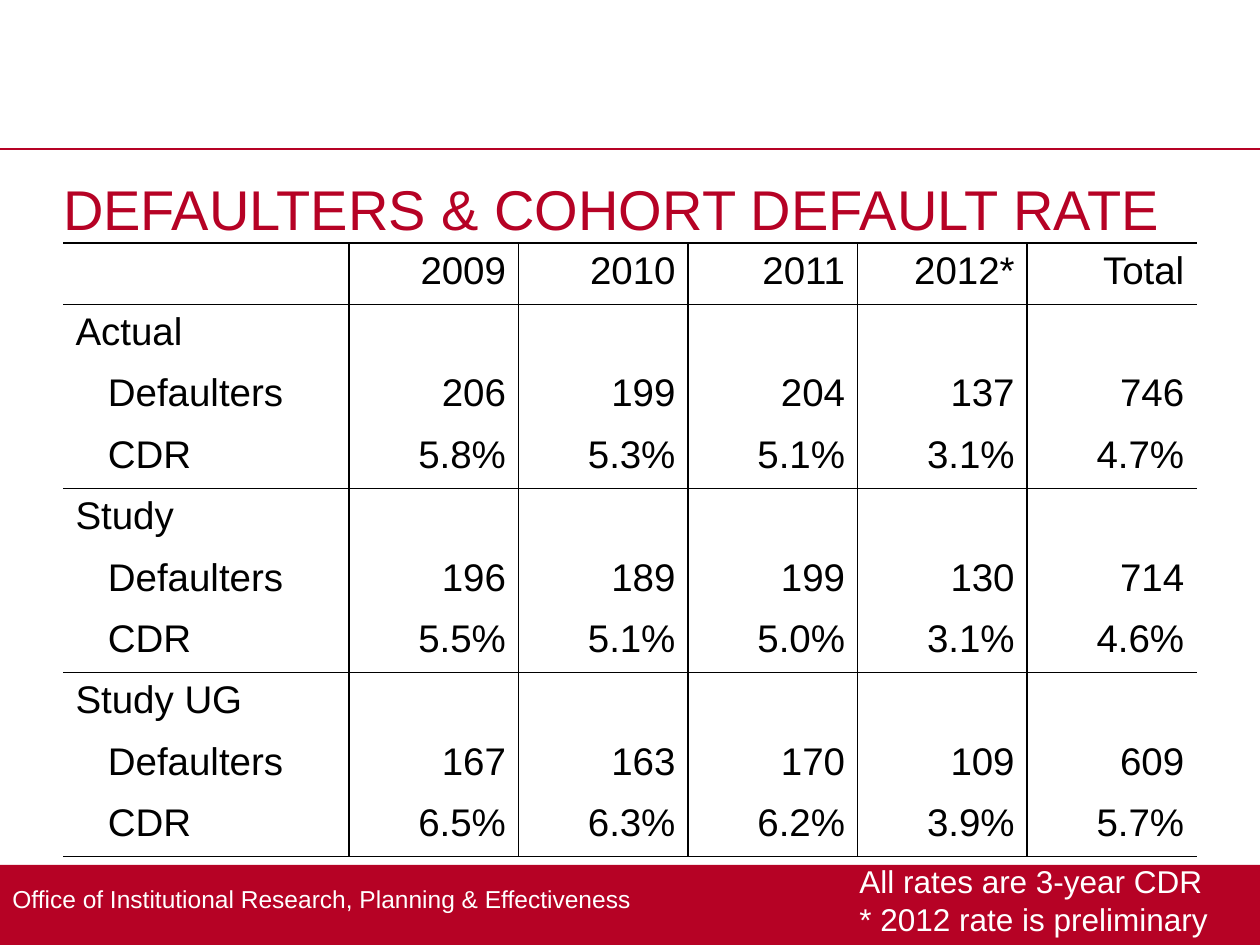
from dataclasses import dataclass
from typing import Any

from lxml import etree
from pptx import Presentation
from pptx.dml.color import RGBColor
from pptx.enum.shapes import MSO_CONNECTOR, MSO_SHAPE
from pptx.enum.text import MSO_ANCHOR, MSO_AUTO_SIZE, PP_ALIGN
from pptx.oxml.ns import qn
from pptx.util import Emu, Pt

LEFT, RIGHT = PP_ALIGN.LEFT, PP_ALIGN.RIGHT
TOP, MIDDLE = MSO_ANCHOR.TOP, MSO_ANCHOR.MIDDLE
RECT, LINE = MSO_SHAPE.RECTANGLE, MSO_CONNECTOR.STRAIGHT
NO_FIT = MSO_AUTO_SIZE.NONE
PLAIN = "{2D5ABB26-0587-4C30-8999-92F81FD0307C}"


@dataclass(frozen=True)
class Theme:
    font: str = "Arial"
    red: str = "B60225"
    white: str = "FFFFFF"
    black: str = "000000"
    title: int = 32
    cell: int = 22
    note: int = 18
    foot: int = 14
    rule: int = 1


@dataclass(frozen=True)
class Box:
    x: int
    y: int
    w: int
    h: int


@dataclass(frozen=True)
class Group:
    name: str
    counts: list[str]
    rates: list[str]


THEME = Theme()
HEADS = ["", "2009", "2010", "2011", "2012*", "Total"]
GROUPS = [
    Group("Actual", ["206", "199", "204", "137", "746"],
          ["5.8%", "5.3%", "5.1%", "3.1%", "4.7%"]),
    Group("Study", ["196", "189", "199", "130", "714"],
          ["5.5%", "5.1%", "5.0%", "3.1%", "4.6%"]),
    Group("Study UG", ["167", "163", "170", "109", "609"],
          ["6.5%", "6.3%", "6.2%", "3.9%", "5.7%"]),
]
GRID = Box(63, 243, 1134, 614)
LABEL = 286
INDENT = 45


def px(n: int) -> Emu:
    return Emu(round(n * 914400 / 126))


def place(box: Box) -> tuple[Emu, Emu, Emu, Emu]:
    return px(box.x), px(box.y), px(box.w), px(box.h)


def write(frame: Any, text: str, size: int, color: str, align: Any = LEFT) -> None:
    frame.text = text
    for para in frame.paragraphs:
        para.alignment = align
        for run in para.runs:
            run.font.name = THEME.font
            run.font.size = Pt(size)
            run.font.color.rgb = RGBColor.from_string(color)


def add_text(slide: Any, box: Box, text: str, size: int, wrap: bool) -> None:
    frame = slide.shapes.add_textbox(*place(box)).text_frame
    frame.word_wrap = wrap
    frame.vertical_anchor = MIDDLE if wrap else TOP
    write(frame, text, size, THEME.white)


def add_title(slide: Any, box: Box, text: str) -> None:
    title = slide.shapes.title
    title.left, title.top, title.width, title.height = place(box)
    frame = title.text_frame
    frame.word_wrap = True
    frame.auto_size = NO_FIT
    frame.vertical_anchor = TOP
    frame.margin_left = frame.margin_right = 0
    frame.margin_top = px(11)
    write(frame, text, THEME.title, THEME.red)


def add_band(slide: Any, box: Box) -> None:
    band = slide.shapes.add_shape(RECT, *place(box))
    band.shadow.inherit = False
    band.fill.solid()
    band.fill.fore_color.rgb = RGBColor.from_string(THEME.red)
    band.line.fill.background()


def add_rule(slide: Any, y: int, width: int) -> None:
    rule = slide.shapes.add_connector(LINE, 0, px(y), px(width), px(y))
    rule.line.color.rgb = RGBColor.from_string(THEME.red)
    rule.line.width = Pt(THEME.rule)
    etree.SubElement(rule.element.spPr, qn("a:effectLst"))


def add_edges(cell: Any, sides: dict[str, bool]) -> None:
    props = cell._tc.get_or_add_tcPr()
    for side, shown in sides.items():
        edge = etree.SubElement(props, qn(f"a:ln{side}"), w=str(Pt(THEME.rule)))
        if shown:
            fill = etree.SubElement(edge, qn("a:solidFill"))
            etree.SubElement(fill, qn("a:srgbClr"), val=THEME.black)
        else:
            etree.SubElement(edge, qn("a:noFill"))


def add_grid(slide: Any, box: Box, rows: list[list[str]]) -> None:
    count, last = len(rows), len(HEADS) - 1
    table = slide.shapes.add_table(count, last + 1, *place(box)).table
    table.first_row = table.horz_banding = False
    table._tbl.tblPr.find(qn("a:tableStyleId")).text = PLAIN
    for c, col in enumerate(table.columns):
        col.width = px(box.w - LABEL) // last if c else px(LABEL)
    for r, row in enumerate(rows):
        table.rows[r].height = px(box.h) // count
        for c, text in enumerate(row):
            cell = table.cell(r, c)
            add_edges(cell, {"L": c > 0, "R": c < last,
                             "T": r == 0 or r % 3 == 1, "B": r % 3 == 0})
            cell.fill.background()
            if c == 0 and r % 3 != 1:
                cell.margin_left = px(INDENT)
            write(cell.text_frame, text, THEME.cell, THEME.black,
                  RIGHT if c else LEFT)


def table_rows() -> list[list[str]]:
    rows = [HEADS]
    for group in GROUPS:
        rows += [[group.name] + [""] * len(group.counts),
                 ["Defaulters", *group.counts], ["CDR", *group.rates]]
    return rows


def main() -> None:
    deck = Presentation()
    deck.slide_width, deck.slide_height = px(1260), px(945)
    slide = deck.slides.add_slide(deck.slide_layouts[5])
    add_band(slide, Box(0, 865, 1260, 80))
    add_rule(slide, 149, 1260)
    add_text(slide, Box(0, 867, 1260, 64),
             "Office of Institutional Research, Planning & Effectiveness",
             THEME.foot, True)
    add_title(slide, Box(63, 163, 1134, 110), "DEFAULTERS & COHORT DEFAULT RATE")
    add_grid(slide, GRID, table_rows())
    add_text(slide, Box(847, 856, 377, 89),
             "All rates are 3-year CDR\v* 2012 rate is preliminary",
             THEME.note, False)
    deck.save("out.pptx")


if __name__ == "__main__":
    main()
